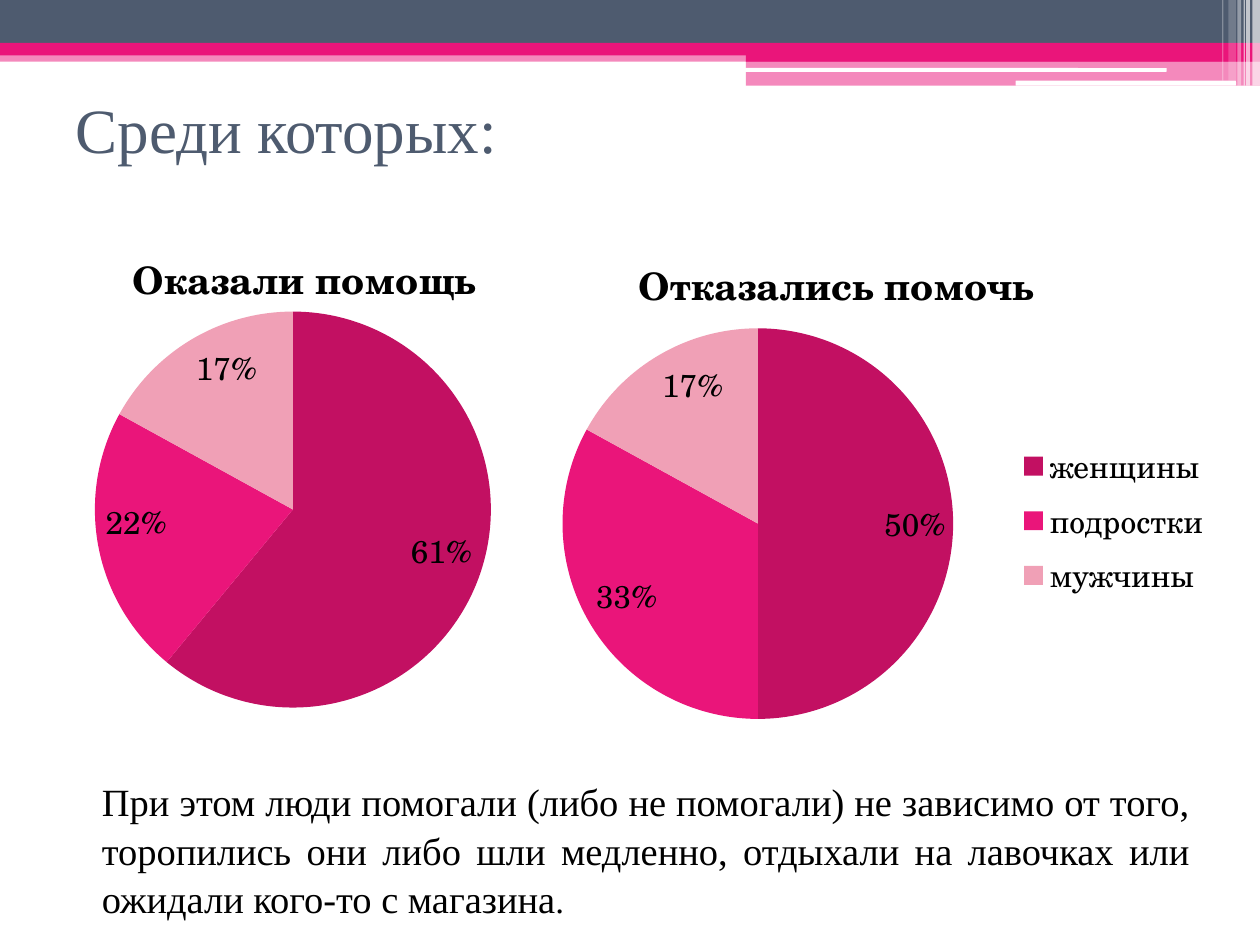
import pptx
import pptx.chart.data
import pptx.dml.color
import pptx.enum.chart
import pptx.enum.shapes
import pptx.enum.text
import pptx.oxml
import pptx.oxml.ns
import pptx.util
from pptx.util import Inches

HUES = {
    "slate": "4E5B6F", "pink": "EA157A", "deep": "C21062",
    "pale": "F0A0B6", "white": "FFFFFF", "black": "000000",
}
SERIF = "Times New Roman"
SCHOOL = "TeX Gyre Schola"

BARS = [
    (0, 0.4, 10, 0.09, "pink", 50),
    (0, 0, 10, 0.34, "slate", 100),
    (0, 0.34, 10, 0.1, "pink", 100),
    (5.92, 0.39, 4.08, 0.1, "pink", 100),
    (5.92, 0.48, 4.08, 0.2, "pink", 50),
]
SLOTS = [(5.91, 0.54, 3.35, 0.03), (8.06, 0.64, 1.75, 0.04)]
STRIPES = [
    (9.94, 0.06, 0.68, 65), (9.89, 0.03, 0.68, 65), (9.87, 0.01, 0.68, 60),
    (9.82, 0.03, 0.68, 40), (9.75, 0.06, 0.64, 20), (9.7, 0.01, 0.64, 30),
]


def hue(name):
    return pptx.dml.color.RGBColor.from_string(HUES[name])


def add_bar(slide, x, y, w, h, name, alpha=100, kind="RECTANGLE"):
    shape = slide.shapes.add_shape(
        pptx.enum.shapes.MSO_SHAPE[kind], Inches(x), Inches(y), Inches(w), Inches(h))
    shape.shadow.inherit = False
    shape.line.fill.background()
    shape.fill.solid()
    shape.fill.fore_color.rgb = hue(name)
    if alpha < 100:
        color = shape._element.spPr.find(".//" + pptx.oxml.ns.qn("a:srgbClr"))
        color.append(pptx.oxml.parse_xml(
            f'<a:alpha {pptx.oxml.ns.nsdecls("a")} val="{alpha * 1000}"/>'))


def set_font(font, size, name, face):
    font.size = pptx.util.Pt(size)
    font.name = face
    font.color.rgb = hue(name)


def add_run(para, text, size, name, face=SERIF):
    run = para.add_run()
    run.text = text
    set_font(run.font, size, name, face)
    return run


def set_title(slide, text):
    title = slide.shapes.title
    title.left, title.top = Inches(0.5), Inches(0.43)
    title.width, title.height = Inches(9), Inches(1.17)
    title.text_frame.vertical_anchor = pptx.enum.text.MSO_ANCHOR.MIDDLE
    para = title.text_frame.paragraphs[0]
    para.alignment = pptx.enum.text.PP_ALIGN.LEFT
    add_run(para, text, 36, "slate")


def place(part, index, x, y, w=None, h=None, inner=False):
    for old in part.findall(pptx.oxml.ns.qn("c:layout")):
        part.remove(old)
    target = '<c:layoutTarget val="inner"/>' if inner else ""
    modes = '<c:xMode val="edge"/><c:yMode val="edge"/>'
    sizes = "".join(f'<c:{key} val="{val}"/>' for key, val in zip("xywh", (x, y, w, h))
                    if val is not None)
    part.insert(index, pptx.oxml.parse_xml(
        f'<c:layout {pptx.oxml.ns.nsdecls("c")}><c:manualLayout>'
        f'{target}{modes}{sizes}</c:manualLayout></c:layout>'))


def add_pie(slide, box, text, cats, vals, head, plot):
    data = pptx.chart.data.CategoryChartData()
    data.categories = cats
    data.add_series("Series 1", vals)
    chart = slide.shapes.add_chart(
        pptx.enum.chart.XL_CHART_TYPE.PIE, *map(Inches, box), data).chart
    set_font(chart.font, 18, "black", SCHOOL)
    chart.has_legend = False
    chart.has_title = True
    title = chart.chart_title
    para = title.text_frame.paragraphs[0]
    add_run(para, text, 21.6, "black", SCHOOL).font.bold = True
    title.include_in_layout = False
    place(title._element, 1, *head)
    place(chart._chartSpace.chart.plotArea, 0, *plot, inner=True)
    pie = chart.plots[0]
    pie.vary_by_categories = True
    for index, name in enumerate(("deep", "pink", "pale")):
        fill = pie.series[0].points[index].format.fill
        fill.solid()
        fill.fore_color.rgb = hue(name)
    pie.has_data_labels = True
    labels = pie.data_labels
    labels.show_percentage = True
    labels.show_value = False
    labels.number_format = "0%"
    labels.number_format_is_linked = False
    labels.position = pptx.enum.chart.XL_LABEL_POSITION.INSIDE_END
    set_font(labels.font, 18, "black", SCHOOL)
    return chart


def add_key(chart, spot):
    chart.has_legend = True
    chart.legend.position = pptx.enum.chart.XL_LEGEND_POSITION.RIGHT
    chart.legend.include_in_layout = False
    set_font(chart.legend.font, 18, "black", SCHOOL)
    place(chart.legend._element, 1, *spot)


def add_note(slide, text):
    frame = slide.shapes.add_textbox(
        Inches(0.59), Inches(6.11), Inches(8.95), Inches(1.21)).text_frame
    frame.word_wrap = True
    frame.auto_size = pptx.enum.text.MSO_AUTO_SIZE.SHAPE_TO_FIT_TEXT
    para = frame.paragraphs[0]
    para.alignment = pptx.enum.text.PP_ALIGN.JUSTIFY
    para.line_spacing = 1.05
    props = para._p.get_or_add_pPr()
    props.set("marL", str(Inches(0.12)))
    props.set("indent", "0")
    add_run(para, text, 22, "black")
    add_run(para, ".", 20, "black")


def main():
    deck = pptx.Presentation()
    deck.slide_width, deck.slide_height = Inches(10), Inches(7.5)
    slide = deck.slides.add_slide(deck.slide_layouts[5])
    for bar in BARS:
        add_bar(slide, *bar)
    for slot in SLOTS:
        add_bar(slide, *slot, "white", kind="ROUNDED_RECTANGLE")
    for x, w, h, alpha in STRIPES:
        add_bar(slide, x, 0, w, h, "white", alpha)
    set_title(slide, "Среди которых:")
    add_pie(slide, (0, 1.62, 5, 4.49), "Оказали помощь", ("1", "2", "3"),
            (61, 22, 17), (0.2, 0.06), (0.15, 0.19, 0.63, 0.7))
    chart = add_pie(slide, (3.5, 1.62, 6.89, 4.57), "Отказались помочь",
                    ("женщины", "подростки", "мужчины"), (50, 33, 17),
                    (0.22, 0.07), (0.14, 0.21, 0.45, 0.69))
    add_key(chart, (0.66, 0.4, 0.23, 0.3))
    add_note(slide, "При этом люди помогали (либо не помогали) не зависимо от того, "
             "торопились они либо шли медленно, отдыхали на лавочках или "
             "ожидали кого-то с магазина")
    deck.save("out.pptx")


if __name__ == "__main__":
    main()
